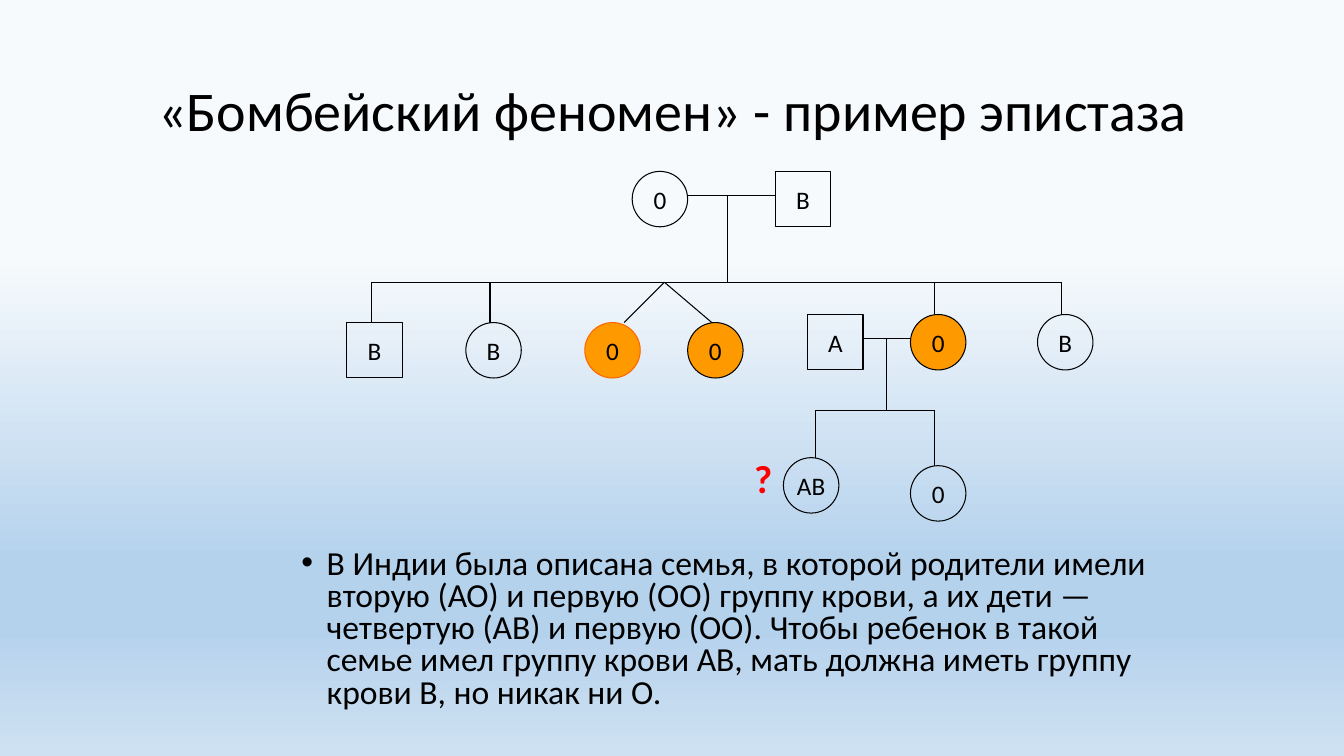
from lxml import etree
from pptx import Presentation
from pptx.dml.color import RGBColor
from pptx.enum import shapes, text
from pptx.oxml.ns import qn
from pptx.util import Inches, Pt

TITLE = "«Бомбейский феномен» - пример эпистаза"
STORY = ("В Индии была описана семья, в которой родители имели вторую (АО) и первую (ОО) "
         "группу крови, а их дети — четвертую (АВ) и первую (ОО). Чтобы ребенок в такой "
         "семье имел группу крови АВ, мать должна иметь группу крови В, но никак ни О")
FONT = "Calibri"
COLORS = {"ink": "000000", "affected": "FF9900", "edge": "FF6600", "question": "FF0000"}
BACKGROUND = [(34, "F7FAFD"), (74, "B5D2EC"), (83, "B5D2EC"), (100, "CEE1F2")]

# Family members: sex, blood group, left, top, fill, outline
SIZE = 0.55
MEMBERS = [
    ("female", "0", 6.27, 1.7, None, "ink"),
    ("male", "В", 7.69, 1.7, None, "ink"),
    ("male", "В", 3.44, 3.2, None, "ink"),
    ("female", "В", 4.62, 3.2, None, "ink"),
    ("female", "0", 5.8, 3.2, "affected", "edge"),
    ("female", "0", 6.82, 3.2, "affected", "ink"),
    ("male", "А", 8.01, 3.12, None, "ink"),
    ("female", "0", 9.03, 3.12, "affected", "ink"),
    ("female", "В", 10.29, 3.12, None, "ink"),
    ("female", "АВ", 7.77, 4.54, None, "ink"),
    ("female", "0", 9.03, 4.62, None, "ink"),
]

# Families: couple (left x, right x, y), middle x, sibling line y,
# then each child's drop as (x on the sibling line, x at the child, y at the child)
FAMILIES = [
    ((6.82, 7.69, 1.94), 7.22, 2.8,
     [(3.68, 3.68, 3.2), (4.86, 4.86, 3.2), (6.59, 6.19, 3.2),
      (6.59, 7.06, 3.2), (9.27, 9.27, 3.12), (10.53, 10.53, 3.12)]),
    ((8.56, 9.03, 3.36), 8.79, 4.07, [(8.09, 8.09, 4.54), (9.27, 9.27, 4.62)]),
]


def color(name):
    return RGBColor.from_string(COLORS[name])


def style(p, size, name="ink", bold=False):
    for r in p.runs:
        r.font.name, r.font.size, r.font.bold = FONT, Pt(size), bold
        r.font.color.rgb = color(name)


def place(sp, left, top, width, height):
    sp.left, sp.top = Inches(left), Inches(top)
    sp.width, sp.height = Inches(width), Inches(height)


def add_line(slide, x1, y1, x2, y2):
    line = slide.shapes.add_connector(
        shapes.MSO_CONNECTOR.STRAIGHT, Inches(x1), Inches(y1), Inches(x2), Inches(y2))
    line.line.color.rgb = color("ink")
    line.line.width = Pt(0.75)
    etree.SubElement(line._element.spPr, qn("a:effectLst"))


def add_member(slide, sex, group, left, top, fill, outline):
    kind = shapes.MSO_SHAPE.OVAL if sex == "female" else shapes.MSO_SHAPE.RECTANGLE
    sp = slide.shapes.add_shape(kind, Inches(left), Inches(top), Inches(SIZE), Inches(SIZE))
    sp.shadow.inherit = False
    if fill:
        sp.fill.solid()
        sp.fill.fore_color.rgb = color(fill)
    else:
        sp.fill.background()
    sp.line.color.rgb = color(outline)
    sp.line.width = Pt(0.75)
    tf = sp.text_frame
    tf.text = group
    tf.word_wrap = False
    tf.vertical_anchor = text.MSO_ANCHOR.MIDDLE
    tf.paragraphs[0].alignment = text.PP_ALIGN.CENTER
    style(tf.paragraphs[0], 18)


def set_background(slide):
    fill = slide.background.fill
    fill.gradient()
    fill.gradient_angle = 270
    stops = slide._element.find(".//" + qn("a:gsLst"))
    for stop in list(stops):
        stops.remove(stop)
    for percent, value in BACKGROUND:
        stop = etree.SubElement(stops, qn("a:gs"), pos=str(percent * 1000))
        etree.SubElement(stop, qn("a:srgbClr"), val=value)


def main():
    prs = Presentation()
    prs.slide_width, prs.slide_height = Inches(13.33), Inches(7.5)
    slide = prs.slides.add_slide(prs.slide_layouts[1])
    set_background(slide)

    # Title
    title = slide.shapes.title
    place(title, 0.92, 0.4, 11.5, 1.45)
    tf = title.text_frame
    tf.text = TITLE
    tf.auto_size = text.MSO_AUTO_SIZE.NONE
    tf.vertical_anchor = text.MSO_ANCHOR.MIDDLE
    p = tf.paragraphs[0]
    p.alignment = text.PP_ALIGN.CENTER
    p.line_spacing = 0.9
    style(p, 40)

    # Explanation
    body = slide.placeholders[1]
    place(body, 2.89, 5.4, 8.78, 2.13)
    tf = body.text_frame
    tf.text = STORY
    tf.auto_size = text.MSO_AUTO_SIZE.NONE
    p = tf.paragraphs[0]
    r = p.add_run()
    r.text = "."
    r.font.italic = True
    p.line_spacing, p.space_before = 0.8, Pt(10)
    style(p, 24)
    pPr = p._p.get_or_add_pPr()
    pPr.set("marL", str(Inches(0.25)))
    pPr.set("indent", str(Inches(-0.25)))
    etree.SubElement(pPr, qn("a:buFont"), typeface="Arial")
    etree.SubElement(pPr, qn("a:buChar"), char="•")

    # Family tree
    for (left, right, couple_y), middle, sibling_y, drops in FAMILIES:
        add_line(slide, left, couple_y, right, couple_y)
        add_line(slide, middle, couple_y, middle, sibling_y)
        add_line(slide, drops[0][0], sibling_y, drops[-1][0], sibling_y)
        for x, child_x, child_y in drops:
            add_line(slide, x, sibling_y, child_x, child_y)
    for member in MEMBERS:
        add_member(slide, *member)

    # Question mark beside the unexpected child
    box = slide.shapes.add_textbox(Inches(7.38), Inches(4.46), Inches(0.38), Inches(0.57))
    tf = box.text_frame
    tf.text = "?"
    tf.word_wrap = False
    tf.auto_size = text.MSO_AUTO_SIZE.SHAPE_TO_FIT_TEXT
    style(tf.paragraphs[0], 28, "question", True)

    prs.save("out.pptx")


if __name__ == "__main__":
    main()
